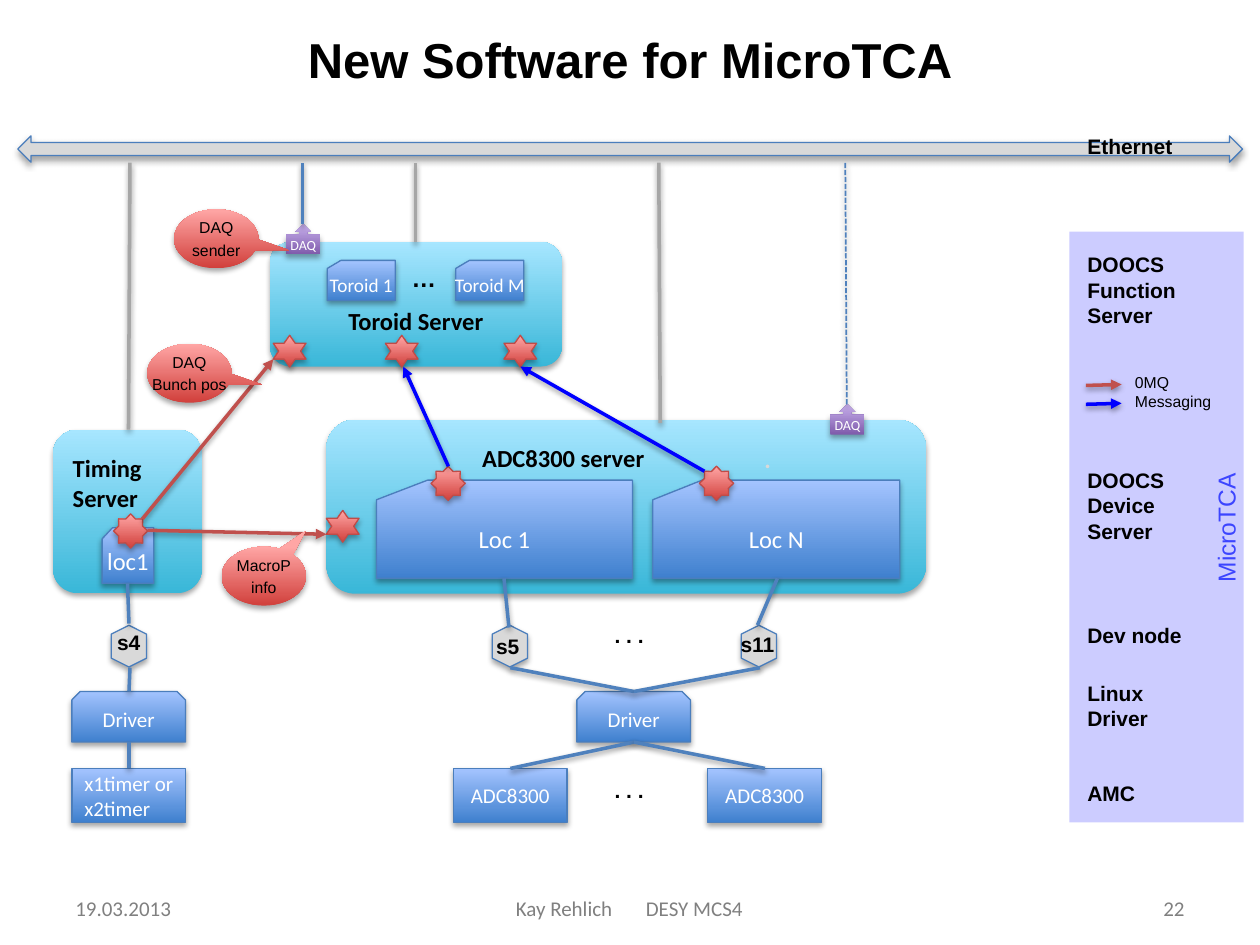
"""Build the MicroTCA software architecture slide."""
from dataclasses import dataclass
from typing import NamedTuple

from lxml import etree
from pptx import Presentation
from pptx.dml.color import RGBColor
from pptx.enum.dml import MSO_LINE
from pptx.enum.shapes import MSO_CONNECTOR, MSO_SHAPE
from pptx.enum.text import MSO_ANCHOR, PP_ALIGN
from pptx.oxml.ns import qn
from pptx.util import Cm, Pt

LEFT, CENTER, RIGHT = PP_ALIGN.LEFT, PP_ALIGN.CENTER, PP_ALIGN.RIGHT
TOP, MIDDLE, BOTTOM = MSO_ANCHOR.TOP, MSO_ANCHOR.MIDDLE, MSO_ANCHOR.BOTTOM
RECT, ROUND, CARD = MSO_SHAPE.RECTANGLE, MSO_SHAPE.ROUNDED_RECTANGLE, MSO_SHAPE.FLOWCHART_CARD
SNIPPED, HEXAGON = MSO_SHAPE.SNIP_2_SAME_RECTANGLE, MSO_SHAPE.HEXAGON
STAR_6, STAR_8 = MSO_SHAPE.STAR_6_POINT, MSO_SHAPE.STAR_8_POINT
BUS, UP_CALLOUT = MSO_SHAPE.LEFT_RIGHT_ARROW, MSO_SHAPE.UP_ARROW_CALLOUT
BUBBLE = MSO_SHAPE.OVAL_CALLOUT
STRAIGHT, DASHED = MSO_CONNECTOR.STRAIGHT, MSO_LINE.SQUARE_DOT

BLACK, WHITE, GREY = "000000", "FFFFFF", "808080"
LINK, RED, BLUE, TRUNK = "4F81BD", "C0504D", "0000FF", "A6A6A6"


class Look(NamedTuple):
    fill: str
    light: str = ""
    edge: str = ""
    shadow: bool = True


class Font(NamedTuple):
    size: float
    name: str = "Calibri"
    color: str = BLACK
    bold: bool = False


PANEL = Look("CCCCFF", shadow=False)
MODULE = Look("3F80CE", "A4C4FF", "4B7EBC")
SERVER = Look("39B7D8", "A7E6FF")
PLAIN = Look("D9D9D9", edge="4B7EBC")
SOCKET = Look("D1403C", "FFA6A5", "BF4C48")
NOTE = Look("D1403C", "FFA6A5")
DAQ = Look("7F5BAB", "C8B0ED")

HEADING = Font(14, bold=True)
LABEL = Font(12, "Arial", bold=True)
SMALL = Font(9, "Arial")
FOOTER = Font(12, color=GREY)


@dataclass
class Block:
    kind: int
    look: Look
    x: float
    y: float
    w: float
    h: float
    text: str = ""
    font: Font = Font(12, color=WHITE)
    align: int = CENTER
    anchor: int = MIDDLE
    margins: tuple = (0.25, 0.13, 0.25, 0.13)
    space: float = 0
    tab: float = 0
    rotation: int = 0
    tip: tuple = ()


@dataclass
class Wire:
    x1: float
    y1: float
    x2: float
    y2: float
    color: str = LINK
    arrow: bool = False
    dashed: bool = False


@dataclass
class Label:
    text: str
    x: float
    y: float
    w: float
    h: float = 0.76
    font: Font = LABEL
    align: int = LEFT
    anchor: int = TOP
    margins: tuple = (0.25, 0.13, 0.25, 0.13)
    tab: float = 0
    rotation: int = 0
    wrap: bool = False


def rgb(value: str) -> RGBColor:
    """Turn a hex string into a colour."""
    return RGBColor.from_string(value)


def write(frame, text: str, font: Font, align=LEFT, anchor=TOP,
          margins=(0.25, 0.13, 0.25, 0.13), wrap=False, space=0.0, tab=0.0) -> None:
    """Fill a text frame, one paragraph per newline and a break per vertical tab."""
    frame.word_wrap = wrap
    frame.vertical_anchor = anchor
    (frame.margin_left, frame.margin_top,
     frame.margin_right, frame.margin_bottom) = map(Cm, margins)
    for index, line in enumerate(text.split("\n")):
        paragraph = frame.add_paragraph() if index else frame.paragraphs[0]
        paragraph.alignment = align
        if index and space:
            paragraph.space_before = Pt(space)
        if tab:
            stops = etree.SubElement(paragraph._p.get_or_add_pPr(), qn("a:tabLst"))
            etree.SubElement(stops, qn("a:tab"), pos=str(Cm(tab)), algn="l")
        for part, words in enumerate(line.split("\v")):
            if part:
                paragraph.add_line_break()
            run = paragraph.add_run()
            run.text = words
            run.font.size, run.font.name, run.font.bold = Pt(font.size), font.name, font.bold
            run.font.color.rgb = rgb(font.color)


def cast_shadow(effects, distance: int, alpha: int) -> None:
    """Add a soft shadow straight below."""
    shadow = etree.SubElement(effects, qn("a:outerShdw"), blurRad="40000", dist=str(distance),
                              dir="5400000", rotWithShape="0")
    black = etree.SubElement(shadow, qn("a:srgbClr"), val=BLACK)
    etree.SubElement(black, qn("a:alpha"), val=str(alpha * 1000))


def draw_block(shapes, block: Block) -> None:
    """Draw one filled shape with its text."""
    shape = shapes.add_shape(block.kind, Cm(block.x), Cm(block.y), Cm(block.w), Cm(block.h))
    shape.rotation = block.rotation
    for index, value in enumerate(block.tip):
        shape.adjustments[index] = value
    look = block.look
    if look.light:
        shape.fill.gradient()
        shape.fill.gradient_angle = 90
        for stop, color in zip(shape.fill.gradient_stops, (look.fill, look.light)):
            stop.color.rgb = rgb(color)
    else:
        shape.fill.solid()
        shape.fill.fore_color.rgb = rgb(look.fill)
    if look.edge:
        shape.line.color.rgb = rgb(look.edge)
        shape.line.width = Pt(0.75)
    else:
        shape.line.fill.background()
    shape.shadow.inherit = False
    if look.shadow:
        cast_shadow(shape._element.spPr.find(qn("a:effectLst")), 23000, 35)
    if block.text:
        write(shape.text_frame, block.text, block.font, block.align, block.anchor,
              block.margins, space=block.space, tab=block.tab)


def draw_wire(shapes, wire: Wire) -> None:
    """Draw one straight connection."""
    line = shapes.add_connector(STRAIGHT, *map(Cm, (wire.x1, wire.y1, wire.x2, wire.y2)))
    line.line.color.rgb = rgb(wire.color)
    line.line.width = Pt(1 if wire.dashed else 2)
    if wire.dashed:
        line.line.dash_style = DASHED
    properties = line._element.spPr
    if wire.arrow:
        etree.SubElement(properties.find(qn("a:ln")), qn("a:tailEnd"), type="triangle")
    cast_shadow(etree.SubElement(properties, qn("a:effectLst")), 20000, 38)


def draw_label(shapes, label: Label) -> None:
    """Draw one free text."""
    box = shapes.add_textbox(Cm(label.x), Cm(label.y), Cm(label.w), Cm(label.h))
    box.rotation = label.rotation
    write(box.text_frame, label.text, label.font, label.align, label.anchor,
          label.margins, label.wrap, tab=label.tab)


def main() -> None:
    """Assemble and save the slide."""
    deck = Presentation()
    deck.slide_width, deck.slide_height = Cm(25.4), Cm(19.05)
    slide = deck.slides.add_slide(deck.slide_layouts[5])
    shapes = slide.shapes
    title = shapes.title
    title.left, title.top, title.width, title.height = map(Cm, (1.27, 0.48, 22.86, 1.42))
    write(title.text_frame, "New Software for MicroTCA", Font(28, "Arial", bold=True),
          CENTER, MIDDLE, wrap=True)

    big, tiny, toroid = Font(14, color=WHITE), Font(8, color=WHITE), Font(11, color=WHITE)
    blocks = [
        Block(RECT, PANEL, 21.56, 4.67, 3.51, 11.91),
        Block(RECT, MODULE, 1.45, 15.49, 2.29, 1.09, "x1timer or\vx2timer", align=LEFT),
        *(Block(RECT, MODULE, x, 15.49, 2.29, 1.09, "ADC8300") for x in (9.14, 14.27)),
        *(Block(SNIPPED, MODULE, x, 13.94, 2.29, 1.02, "Driver") for x in (1.45, 11.63)),
        *(Block(HEXAGON, PLAIN, x, 12.67, 0.84, 0.71, rotation=270)
          for x in (2.18, 9.86, 14.88)),
        Block(ROUND, SERVER, 1.07, 8.66, 3, 3.3, "Timing\nServer", HEADING, LEFT, TOP,
              (0.25, 0.33, 0.25, 0.13)),
        Block(ROUND, SERVER, 6.58, 8.46, 12.09, 3.51, "ADC8300 server", HEADING, LEFT, TOP,
              (2.97, 0.3, 0.25, 0.13)),
        Block(ROUND, SERVER, 5.44, 4.88, 5.89, 2.51, "Toroid Server", HEADING, CENTER, BOTTOM,
              (0.25, 0.13, 0.25, 0.5)),
        Block(BUS, PLAIN, 0.36, 2.74, 24.69, 0.53),
        Block(CARD, MODULE, 2.06, 10.64, 1.04, 1.12, "loc1", big),
        Block(CARD, MODULE, 7.59, 9.68, 5.16, 1.98, "Loc 1", big),
        Block(CARD, MODULE, 13.16, 9.68, 4.98, 1.98, "Loc N", big),
        *(Block(CARD, MODULE, x, 5.25, 1.37, 0.81, name, toroid)
          for x, name in ((6.6, "Toroid 1"), (9.19, "Toroid M"))),
        *(Block(STAR_8, SOCKET, x, y, 0.69, 0.69)
          for x, y in ((2.29, 10.36), (8.69, 9.4), (14.1, 9.4))),
        *(Block(STAR_6, SOCKET, x, y, 0.66, 0.64)
          for x, y in ((5.51, 6.76), (7.77, 6.76), (10.16, 6.76), (6.58, 10.29))),
        *(Block(UP_CALLOUT, DAQ, x, y, 0.69, 0.61, "DAQ", tiny)
          for x, y in ((5.77, 4.52), (16.74, 8.15))),
    ]
    wires = [
        Wire(2.6, 15.49, 2.6, 14.96), Wire(2.6, 13.94, 2.62, 13.46),
        Wire(2.6, 12.57, 2.57, 11.76), Wire(10.29, 15.49, 12.78, 14.96),
        Wire(15.42, 15.49, 12.78, 14.96), Wire(10.29, 13.46, 12.78, 13.94),
        Wire(15.32, 13.46, 12.78, 13.94), Wire(15.67, 11.66, 15.27, 12.6),
        Wire(10.26, 12.65, 10.16, 11.66), Wire(6.1, 4.52, 6.1, 3.28),
        Wire(17.07, 8.15, 17.04, 3.28, dashed=True),
        *(Wire(*ends, TRUNK) for ends in ((13.31, 8.53, 13.28, 3.28), (8.38, 4.88, 8.38, 3.28),
                                          (2.59, 8.66, 2.62, 3.28))),
        *(Wire(*ends, RED, True) for ends in ((2.87, 10.46, 5.51, 7.24), (2.97, 10.69, 6.58, 10.77),
                                              (21.89, 7.77, 22.61, 7.75))),
        *(Wire(*ends, BLUE, True) for ends in ((9.04, 9.4, 8.13, 7.39), (14.2, 9.5, 10.49, 7.39),
                                               (21.89, 8.15, 22.61, 8.13))),
    ]
    labels = [
        Label("Ethernet", 21.67, 2.57, 2.26),
        Label("DOOCS\nFunction\nServer", 21.67, 4.95, 2.31, 2.01),
        Label("DOOCS\nDevice\vServer", 21.67, 9.3, 2.08, 1.9),
        Label("Dev node", 21.67, 12.42, 2.44),
        Label("Linux\nDriver", 21.67, 13.59, 1.75, 1.4),
        Label("AMC", 21.67, 15.6, 1.52),
        *(Label(". . .", 12.14, y, 1.12) for y in (12.42, 15.54)),
        Label("s4", 2.11, 12.57, 0.99),
        Label("s5", 9.75, 12.65, 0.99),
        Label("s11", 14.68, 12.6, 1.19),
        Label(".", 15.16, 8.83, 0.7, 0.86, Font(14, color="D9D9D9", bold=True)),
        Label("…", 8.05, 5.18, 1.02, 0.86, Font(14, "Arial", bold=True)),
        Label("MicroTCA", 18.77, 10.21, 11.89, 0.86, Font(14, "Arial", "3C45FF"), CENTER,
              rotation=270, wrap=True),
        Label("0MQ\nMessaging", 22.63, 7.39, 2.06, 1.12, SMALL),
        Label("19.03.2013", 1.27, 17.96, 5.92, 0.71, FOOTER, LEFT, MIDDLE, wrap=True),
        Label("Kay Rehlich\tDESY MCS4", 8.69, 17.96, 8.05, 0.71, FOOTER, LEFT, MIDDLE,
              (1.71, 0.13, 0.25, 0.13), 2.62, wrap=True),
        Label("22", 18.21, 17.96, 5.92, 0.71, FOOTER, RIGHT, MIDDLE, wrap=True),
    ]
    bubbles = [
        Block(BUBBLE, NOTE, x, y, 1.7, 1.19, text, SMALL, CENTER, TOP, (0.25, 0, 0.25, 0), 2, tip=tip)
        for x, y, text, tip in ((3.51, 4.22, "DAQ\nsender", (0.86, 0.19)),
                                (2.97, 6.93, "DAQ\nBunch pos", (0.86, 0.19)),
                                (4.47, 11.02, "MacroP\ninfo", (0.49, -0.76)))
    ]
    for draw, items in ((draw_block, blocks), (draw_wire, wires),
                        (draw_label, labels), (draw_block, bubbles)):
        for item in items:
            draw(shapes, item)
    deck.save("out.pptx")


if __name__ == "__main__":
    main()
